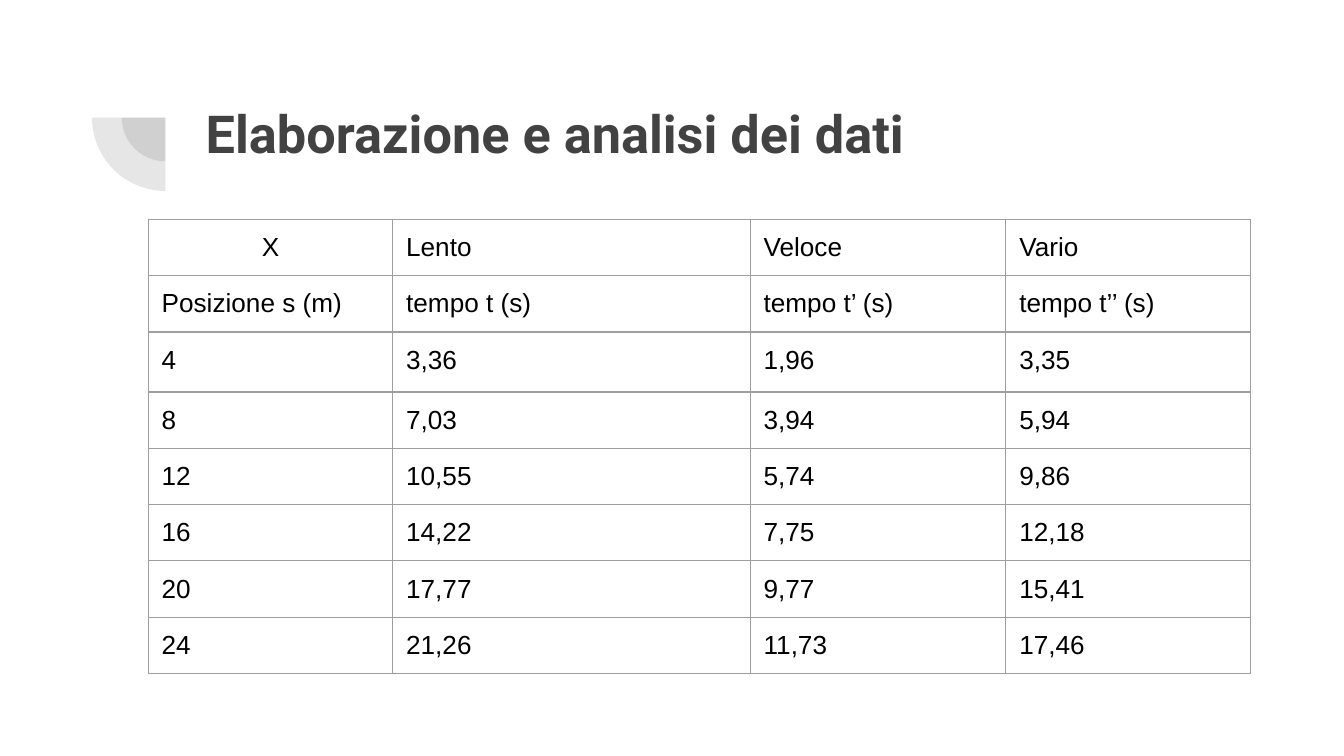
import pptx
import pptx.util
import pptx.dml.color
import pptx.enum.shapes
import pptx.enum.text
import pptx.oxml
import pptx.oxml.ns

Pt = pptx.util.Pt
ALIGN = pptx.enum.text.PP_ALIGN
ANCHOR = pptx.enum.text.MSO_ANCHOR
MARGINS = dict.fromkeys(
    ("margin_left", "margin_right", "margin_top", "margin_bottom"), Pt(7.2)
)
TITLE_FONT = {"name": "Roboto", "size": Pt(28), "bold": True}
CELL_FONT = {"name": "Arial", "size": Pt(14), "bold": False}
COLUMN_WIDTHS = (131, 191.5, 137, 131)
ROW_HEIGHTS = (28, 28, 32.2, 28, 28, 28, 28, 28)
ROWS = (
    ("X", "Lento", "Veloce", "Vario"),
    ("Posizione s (m)", "tempo t (s)", "tempo t’ (s)", "tempo t’’ (s)"),
    ("4", "3,36", "1,96", "3,35"),
    ("8", "7,03", "3,94", "5,94"),
    ("12", "10,55", "5,74", "9,86"),
    ("16", "14,22", "7,75", "12,18"),
    ("20", "17,77", "9,77", "15,41"),
    ("24", "21,26", "11,73", "17,46"),
)


def set_values(target, values):
    for name, value in values.items():
        setattr(target, name, value)


def color(hex_value):
    return pptx.dml.color.RGBColor.from_string(hex_value)


def write_text(para, text, font_values, hex_value, alignment=ALIGN.LEFT):
    para.alignment = alignment
    span = para.add_run()
    span.text = text
    set_values(span.font, font_values)
    span.font.color.rgb = color(hex_value)


def add_quarter(page, center_x, center_y, radius):
    quarter = page.shapes.add_shape(
        pptx.enum.shapes.MSO_SHAPE.PIE,
        Pt(center_x - radius), Pt(center_y - radius), Pt(2 * radius), Pt(2 * radius),
    )
    quarter.rotation = 270
    quarter.adjustments[0] = 108
    quarter.adjustments[1] = 162
    quarter.shadow.inherit = False
    quarter.line.fill.background()
    quarter.fill.solid()
    quarter.fill.fore_color.rgb = color("424242")
    fill_color = quarter.fill._xPr.find(".//" + pptx.oxml.ns.qn("a:srgbClr"))
    fill_color.append(pptx.oxml.parse_xml(
        f'<a:alpha {pptx.oxml.ns.nsdecls("a")} val="13000"/>'
    ))


def add_title(page, text):
    box = page.shapes.title
    set_values(box, {"left": Pt(103), "top": Pt(46.8), "width": Pt(553.7), "height": Pt(78.5)})
    frame = box.text_frame
    set_values(frame, MARGINS)
    set_values(frame, {
        "word_wrap": True,
        "vertical_anchor": ANCHOR.TOP,
        "auto_size": pptx.enum.text.MSO_AUTO_SIZE.NONE,
    })
    write_text(frame.paragraphs[0], text, TITLE_FONT, "424242")


def add_borders(cell, hex_value, width):
    properties = cell._tc.get_or_add_tcPr()
    for position, side in enumerate(("lnL", "lnR", "lnT", "lnB")):
        properties.insert(position, pptx.oxml.parse_xml(
            f'<a:{side} {pptx.oxml.ns.nsdecls("a")} w="{Pt(width)}"><a:solidFill>'
            f'<a:srgbClr val="{hex_value}"/></a:solidFill></a:{side}>'
        ))


def add_data_table(page, left, top):
    table = page.shapes.add_table(
        len(ROWS), len(COLUMN_WIDTHS),
        Pt(left), Pt(top), Pt(sum(COLUMN_WIDTHS)), Pt(sum(ROW_HEIGHTS)),
    ).table
    set_values(table, {"first_row": False, "horz_banding": False})
    for column, width in zip(table.columns, COLUMN_WIDTHS):
        column.width = Pt(width)
    for row, height, texts in zip(table.rows, ROW_HEIGHTS, ROWS):
        row.height = Pt(height)
        for cell, text in zip(row.cells, texts):
            set_values(cell, MARGINS)
            cell.vertical_anchor = ANCHOR.TOP
            cell.fill.background()
            add_borders(cell, "9E9E9E", 0.75)
            alignment = ALIGN.CENTER if text == "X" else ALIGN.LEFT
            write_text(cell.text_frame.paragraphs[0], text, CELL_FONT, "000000", alignment)


def main():
    deck = pptx.Presentation()
    set_values(deck, {"slide_width": Pt(720), "slide_height": Pt(405)})
    page = deck.slides.add_slide(deck.slide_layouts[5])
    for radius in (23.4, 39.3):
        add_quarter(page, 88.6, 63, radius)
    add_title(page, "Elaborazione e analisi dei dati")
    add_data_table(page, 79.4, 117.5)
    deck.save("out.pptx")


if __name__ == "__main__":
    main()
